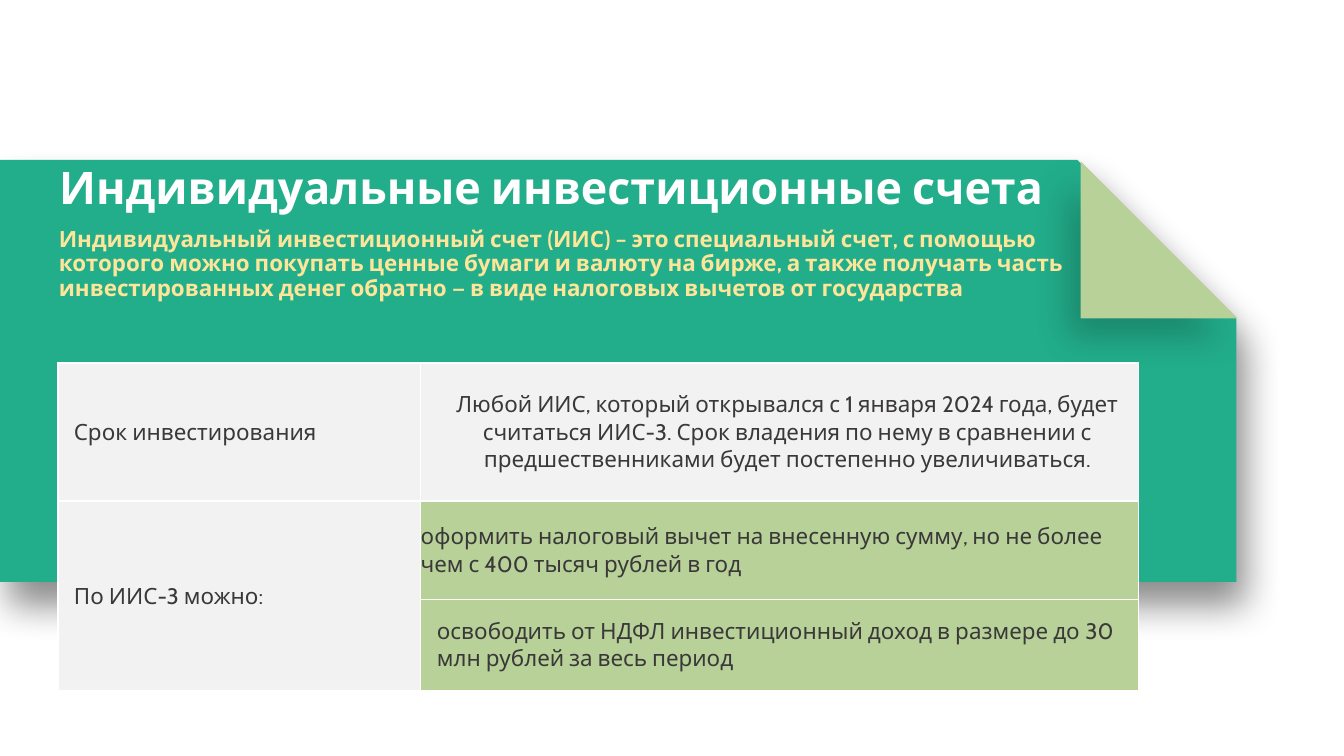
from lxml import etree
from pptx import Presentation
from pptx.dml.color import RGBColor
from pptx.enum.shapes import MSO_SHAPE as SHAPE
from pptx.enum.text import MSO_ANCHOR as ANCHOR, MSO_AUTO_SIZE as AUTO, PP_ALIGN as ALIGN
from pptx.oxml import parse_xml
from pptx.oxml.ns import nsdecls, qn
from pptx.util import Inches, Pt

GREEN = RGBColor(0x22, 0xAE, 0x8B)
LIGHT_GREEN = RGBColor(0xB7, 0xD1, 0x99)
YELLOW = RGBColor(0xFE, 0xE5, 0x99)
WHITE = RGBColor(0xFF, 0xFF, 0xFF)
GREY = RGBColor(0xF2, 0xF2, 0xF2)
DARK = RGBColor(0x3A, 0x38, 0x38)


def write(tf, text, color, size=12, bold=False, align=ALIGN.LEFT):
    p = tf.paragraphs[0]
    p.alignment = align
    r = p.add_run()
    r.text = text
    r.font.color.rgb = color
    for name, value in {"name": "Cabin", "size": Pt(size), "bold": bold}.items():
        setattr(r.font, name, value)
    return p


def add_shadow(sp, opacity, blur, distance, angle):
    """Opacity in percent, blur and distance in points, angle in degrees."""
    sp.shadow.inherit = False
    effects = sp._element.spPr.find(qn("a:effectLst"))
    effects.append(parse_xml(
        f'<a:outerShdw {nsdecls("a")} blurRad="{Pt(blur)}" dist="{Pt(distance)}" '
        f'dir="{angle * 60000}" algn="ctr" rotWithShape="0"><a:srgbClr val="000000">'
        f'<a:alpha val="{opacity * 1000}"/></a:srgbClr></a:outerShdw>'))


prs = Presentation()
prs.slide_width = Inches(10)
prs.slide_height = Inches(10 * 9 / 16)
s = prs.slides.add_slide(prs.slide_layouts[5])

# Green sheet with a folded corner, behind the title
sheet = s.shapes.add_shape(SHAPE.SNIP_ROUND_RECTANGLE,
                           Inches(3.03), Inches(-1.84), Inches(3.14), Inches(9.2))
sheet.adjustments[0] = 0
sheet.adjustments[1] = 0.377
sheet.rotation = 90
sheet._element.spPr.xfrm.set("flipH", "1")
fold = s.shapes.add_shape(SHAPE.RIGHT_TRIANGLE,
                          Inches(8.04), Inches(1.2), Inches(1.17), Inches(1.17))
for sp, color, shadow in ((sheet, GREEN, (45, 20, 14, 70)),
                          (fold, LIGHT_GREEN, (22, 19, 12, 125))):
    sp.fill.solid()
    sp.fill.fore_color.rgb = color
    sp.line.fill.background()
    add_shadow(sp, *shadow)

# Title and definition
title = s.shapes.title
s.shapes._spTree.append(title._element)
definition = s.shapes.add_textbox(0, 0, 0, 0)
for sp, top, height, text, color, size in (
    (title, 1.18, 0.56, "Индивидуальные инвестиционные счета", WHITE, 24),
    (definition, 1.65, 0.84,
     "Индивидуальный инвестиционный счет (ИИС) – это специальный счет, с помощью "
     "которого можно покупать ценные бумаги и валюту на бирже, а также получать часть "
     "инвестированных денег обратно — в виде налоговых вычетов от государства",
     YELLOW, 12),
):
    sp.left, sp.top = Inches(0.34), Inches(top)
    sp.width, sp.height = Inches(7.77), Inches(height)
    tf = sp.text_frame
    for name, value in {"word_wrap": True, "auto_size": AUTO.NONE,
                        "vertical_anchor": ANCHOR.TOP}.items():
        setattr(tf, name, value)
    write(tf, text, color, size, bold=True).line_spacing = 0.9

# Table
COLS = (2.7, 5.34)
ROWS = (1.03, 0.73, 0.68)
table = s.shapes.add_table(len(ROWS), len(COLS), Inches(0.43), Inches(2.7),
                           Inches(sum(COLS)), Inches(sum(ROWS))).table
table.first_row = table.horz_banding = False
for col, width in zip(table.columns, COLS):
    col.width = Inches(width)
for row, height in zip(table.rows, ROWS):
    row.height = Inches(height)
table.cell(1, 0).merge(table.cell(2, 0))

# (row, column): text, fill, alignment, indent
CELLS = {
    (0, 0): ("Срок инвестирования", GREY, ALIGN.LEFT, 0.12),
    (0, 1): ("Любой ИИС, который открывался с 1 января 2024 года, будет считаться ИИС-3. "
             "Срок владения по нему в сравнении с предшественниками будет постепенно "
             "увеличиваться.", GREY, ALIGN.CENTER, 0.12),
    (1, 0): ("По ИИС-3 можно:", GREY, ALIGN.LEFT, 0.12),
    (1, 1): ("оформить налоговый вычет на внесенную сумму, но не более чем с 400 тысяч "
             "рублей в год", LIGHT_GREEN, ALIGN.LEFT, 0),
    (2, 0): ("", GREY, ALIGN.LEFT, 0),
    (2, 1): ("освободить от НДФЛ инвестиционный доход в размере до 30 млн рублей за весь "
             "период", LIGHT_GREEN, ALIGN.LEFT, 0.12),
}
for (row, col), (text, fill, align, indent) in CELLS.items():
    cell = table.cell(row, col)
    for side in ("left", "top", "right", "bottom"):
        setattr(cell, f"margin_{side}", 0)
    cell.vertical_anchor = ANCHOR.MIDDLE
    tcPr = cell._tc.get_or_add_tcPr()
    for tag in ("a:lnL", "a:lnR", "a:lnT", "a:lnB"):
        ln = etree.SubElement(tcPr, qn(tag), w=str(Pt(1)))
        color = etree.SubElement(etree.SubElement(ln, qn("a:solidFill")), qn("a:srgbClr"))
        color.set("val", str(WHITE))
    cell.fill.solid()
    cell.fill.fore_color.rgb = fill
    if text:
        p = write(cell.text_frame, text, DARK, align=align)
        pPr = p._p.get_or_add_pPr()
        pPr.set("marL", str(Inches(indent)))
        pPr.set("indent", "0")

prs.save("out.pptx")
